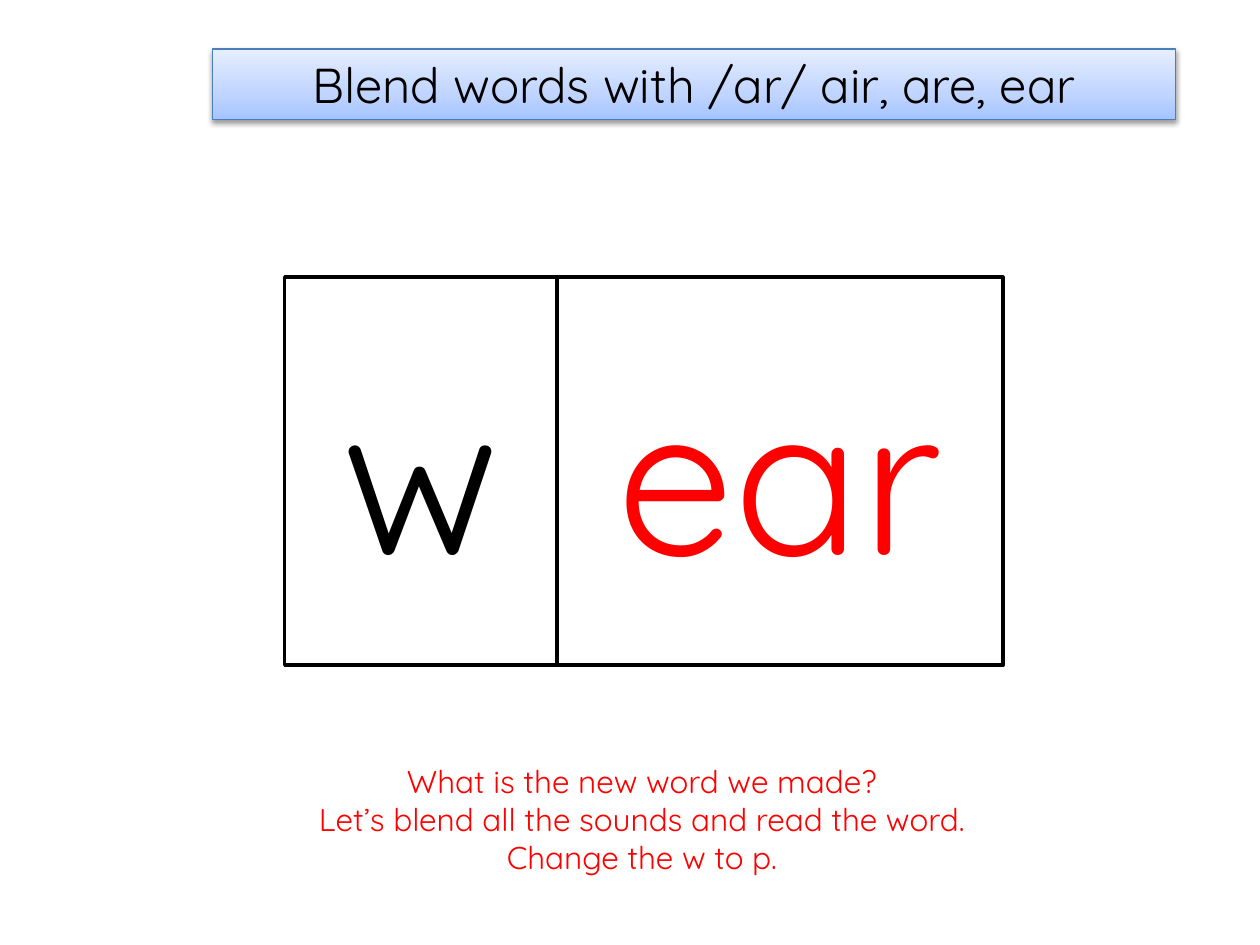
from dataclasses import dataclass

from pptx import Presentation
from pptx.dml.color import RGBColor
from pptx.enum.shapes import MSO_SHAPE as Shape
from pptx.enum.text import MSO_ANCHOR as Anchor, MSO_AUTO_SIZE as AutoSize, PP_ALIGN as Align
from pptx.oxml import parse_xml
from pptx.oxml.ns import nsdecls, qn
from pptx.util import Cm, Pt


@dataclass(frozen=True)
class Theme:
    font: str = "Quicksand"
    black: str = "000000"
    white: str = "FFFFFF"
    red: str = "FF0000"
    banner_line: str = "4B7EBC"
    banner_stops: tuple = ((0, "A4C4FF"), (35, "BFD4FF"), (100, "E6EEFF"))
    title_size: int = 28
    sound_size: int = 120
    prompt_size: int = 18


class SlideBuilder:
    """Holds the theme and the current slide."""

    def __init__(self, slide, theme):
        self.slide = slide
        self.theme = theme

    def add_lines(self, shape, lines, size, color, anchor):
        frame = shape.text_frame
        frame.word_wrap = True
        frame.vertical_anchor = anchor
        for index, line in enumerate(lines):
            paragraph = frame.add_paragraph() if index else frame.paragraphs[0]
            paragraph.alignment = Align.CENTER
            run = paragraph.add_run()
            run.text = line
            run.font.name = self.theme.font
            run.font.size = Pt(size)
            run.font.color.rgb = RGBColor.from_string(color)

    def outline(self, shape, color, width):
        shape.line.color.rgb = RGBColor.from_string(color)
        shape.line.width = Pt(width)

    def banner(self, text, left, top, width, height):
        title = self.slide.shapes.title
        title.left, title.top, title.width, title.height = left, top, width, height
        title.text_frame.auto_size = AutoSize.NONE
        self.add_lines(title, [text], self.theme.title_size, self.theme.black, Anchor.MIDDLE)

        # Three-stop gradient, rising from the bottom edge
        title.fill.gradient()
        title.fill.gradient_angle = 90
        stops = "".join(
            f'<a:gs pos="{position * 1000}"><a:srgbClr val="{color}"/></a:gs>'
            for position, color in self.theme.banner_stops
        )
        properties = title.element.spPr
        gradient = properties.find(qn("a:gradFill"))
        gradient.replace(
            gradient.find(qn("a:gsLst")),
            parse_xml(f'<a:gsLst {nsdecls("a")}>{stops}</a:gsLst>'),
        )
        self.outline(title, self.theme.banner_line, 0.75)

        # Soft shadow below
        properties.append(parse_xml(
            f'<a:effectLst {nsdecls("a")}>'
            f'<a:outerShdw blurRad="{Pt(3.1)}" dist="{Pt(1.6)}" dir="5400000" rotWithShape="0">'
            f'<a:srgbClr val="{self.theme.black}"><a:alpha val="38000"/></a:srgbClr>'
            '</a:outerShdw></a:effectLst>'
        ))

    def sound_box(self, text, color, left, top, width, height):
        box = self.slide.shapes.add_shape(Shape.RECTANGLE, left, top, width, height)
        box.shadow.inherit = False
        box.fill.solid()
        box.fill.fore_color.rgb = RGBColor.from_string(self.theme.white)
        self.outline(box, self.theme.black, 2)
        self.add_lines(box, [text], self.theme.sound_size, color, Anchor.MIDDLE)

    def prompt(self, lines, left, top, width, height):
        box = self.slide.shapes.add_textbox(left, top, width, height)
        self.add_lines(box, lines, self.theme.prompt_size, self.theme.red, Anchor.TOP)
        box.text_frame.auto_size = AutoSize.SHAPE_TO_FIT_TEXT


def main():
    presentation = Presentation()
    presentation.slide_width, presentation.slide_height = Cm(25.4), Cm(19.05)
    title_only = presentation.slide_layouts[5]
    theme = Theme()
    builder = SlideBuilder(presentation.slides.add_slide(title_only), theme)

    # Title banner
    builder.banner("Blend words with /ar/ air, are, ear", Cm(4.29), Cm(0.99), Cm(19.41), Cm(1.42))

    # Sound boxes, side by side
    left = Cm(5.74)
    for sound, color, width in (("w", theme.black, Cm(5.49)), ("ear", theme.red, Cm(8.99))):
        builder.sound_box(sound, color, left, Cm(5.59), width, Cm(7.82))
        left += width

    # Reading prompt
    builder.prompt(
        [
            "What is the new word we made?",
            "Let’s blend all the sounds and read the word.",
            "Change the w to p.",
        ],
        Cm(4.09), Cm(15.24), Cm(17.7), Cm(2.57),
    )

    presentation.save("out.pptx")


if __name__ == "__main__":
    main()
